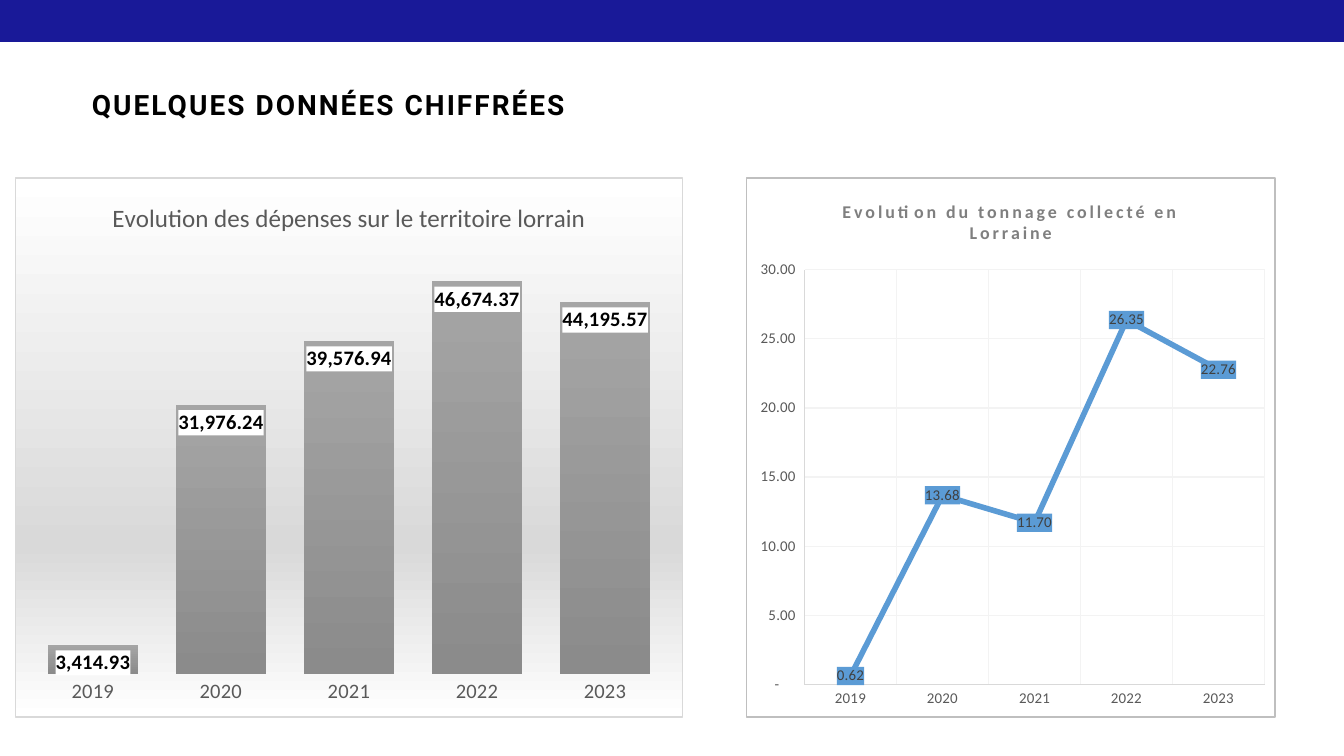
"""Build the slide of key figures: yearly spending and collected tonnage in Lorraine."""
from lxml.etree import SubElement
from pptx import Presentation
from pptx.chart.data import CategoryChartData
from pptx.dml.color import RGBColor
from pptx.enum.chart import XL_CHART_TYPE, XL_LABEL_POSITION, XL_MARKER_STYLE, XL_TICK_MARK
from pptx.enum.shapes import MSO_SHAPE
from pptx.enum.text import MSO_ANCHOR, PP_ALIGN
from pptx.oxml import parse_xml
from pptx.oxml.ns import nsdecls, qn
from pptx.util import Pt


def color(value):
    """Turn a hex string into a colour."""
    return RGBColor.from_string(value)


def write(frame, text, size=11, font="Calibri", ink="000000", bold=False, spacing=0, align=PP_ALIGN.CENTER):
    """Put one formatted paragraph into a text frame."""
    paragraph = frame.paragraphs[0]
    paragraph.alignment = align
    run = paragraph.add_run()
    run.text = text
    run.font.size, run.font.name, run.font.bold = Pt(size), font, bold
    run.font.color.rgb = color(ink)
    run.font._element.set("spc", str(round(spacing * 100)))


deck = Presentation()
deck.slide_width, deck.slide_height = Pt(720), Pt(405)
slide = deck.slides.add_slide(deck.slide_layouts[5])

band = slide.shapes.add_shape(MSO_SHAPE.RECTANGLE, Pt(0), Pt(0), Pt(720), Pt(22.5))
band.shadow.inherit = False
band.fill.solid()
band.fill.fore_color.rgb = color("191998")
band.line.fill.background()

heading = slide.shapes.title
heading.left, heading.top, heading.width, heading.height = Pt(42), Pt(43.5), Pt(637), Pt(60)
heading.text_frame.vertical_anchor = MSO_ANCHOR.TOP
heading.text_frame.word_wrap = True
write(heading.text_frame, "QUELQUES DONNÉES CHIFFRÉES", size=15, font="Roboto",
      bold=True, spacing=1.1, align=PP_ALIGN.LEFT)

years = ["2019", "2020", "2021", "2022", "2023"]
accounting = '_(* #,##0.00_);_(* \\(#,##0.00\\);_(* "-"??_);_(@_)'
spending = dict(
    kind=XL_CHART_TYPE.COLUMN_CLUSTERED, left=8, width=358, size=11, top_value=50000, step=10000,
    values=[3414.93, 31976.24, 39576.94, 46674.37, 44195.57],
    title="Evolution des dépenses sur le territoire lorrain",
    title_format=dict(size=13.4, ink="595959"),
    backdrop=[(0, "FFFFFF"), (68, "D9D9D9"), (100, "FFFFFF")], border="D9D9D9",
    plot_area=dict(x=0.02, y=0.14, w=0.96, h=0.78),
    label_fill="FFFFFF", label_ink="000000", label_bold=True, label_place=XL_LABEL_POSITION.INSIDE_END)
tonnage = dict(
    kind=XL_CHART_TYPE.LINE, left=399.5, width=284, size=8, top_value=30, step=5,
    values=[0.62, 13.68, 11.7, 26.35, 22.76],
    title="Evolution du tonnage collecté en Lorraine",
    title_format=dict(size=9.6, ink="7F7F7F", bold=True, spacing=1.5),
    backdrop=[(0, "FFFFFF"), (100, "FFFFFF")], border="BFBFBF",
    plot_area=dict(x=0.11, y=0.17, w=0.87, h=0.77),
    label_fill="5B9BD5", label_ink="404040", label_bold=False, label_place=XL_LABEL_POSITION.CENTER)

for topic in (spending, tonnage):
    figures = CategoryChartData(number_format="#,##0.00")
    figures.categories = years
    figures.add_series("Series 1", topic["values"])
    chart = slide.shapes.add_chart(topic["kind"], Pt(topic["left"]), Pt(95), Pt(topic["width"]),
                                   Pt(289.5), figures).chart
    chart.has_legend = False
    chart.font.size, chart.font.name = Pt(topic["size"]), "Calibri"
    write(chart.chart_title.text_frame, topic["title"], **topic["title_format"])
    chart.chart_title.include_in_layout = False

    stops = "".join(f'<a:gs pos="{place * 1000}"><a:srgbClr val="{tone}"/></a:gs>'
                    for place, tone in topic["backdrop"])
    chart._chartSpace.find(qn("c:chart")).addnext(parse_xml(
        f'<c:spPr {nsdecls("c", "a")}><a:gradFill><a:gsLst>{stops}</a:gsLst><a:lin ang="5400000"/></a:gradFill>'
        f'<a:ln w="9525"><a:solidFill><a:srgbClr val="{topic["border"]}"/></a:solidFill></a:ln></c:spPr>'))

    plot_area = chart._chartSpace.find(".//" + qn("c:plotArea"))
    for stale in plot_area.findall(qn("c:layout")):
        plot_area.remove(stale)
    layout = parse_xml(f'<c:layout {nsdecls("c")}><c:manualLayout/></c:layout>')
    settings = dict(layoutTarget="inner", xMode="edge", yMode="edge", **topic["plot_area"])
    for key, value in settings.items():
        SubElement(layout[0], qn(f"c:{key}")).set("val", str(value))
    plot_area.insert(0, layout)

    for axis in (chart.category_axis, chart.value_axis):
        axis.major_tick_mark = axis.minor_tick_mark = XL_TICK_MARK.NONE
        axis.tick_labels.font.size, axis.tick_labels.font.name = Pt(topic["size"]), "Calibri"
        axis.tick_labels.font.color.rgb = color("595959")
        axis.has_major_gridlines = topic is tonnage
        if topic is tonnage:
            axis.format.line.color.rgb = color("D9D9D9")
            axis.format.line.width = Pt(0.25)
            axis.major_gridlines.format.line.color.rgb = color("F3F3F3")
            axis.major_gridlines.format.line.width = Pt(0.75)
        else:
            axis.format.line.fill.background()
    chart.value_axis.minimum_scale, chart.value_axis.maximum_scale = 0, topic["top_value"]
    chart.value_axis.major_unit = topic["step"]
    chart.value_axis.tick_labels.number_format = accounting
    chart.value_axis.tick_labels.number_format_is_linked = False
    chart.value_axis.visible = topic is tonnage

    plot = chart.plots[0]
    plot.vary_by_categories = False
    series = plot.series[0]
    if topic is spending:
        plot.gap_width = 41
        series.format.fill.gradient()
        series.format.fill.gradient_angle = 270
        for stop, tone in zip(series.format.fill.gradient_stops, ("A5A5A5", "8B8B8B")):
            stop.color.rgb = color(tone)
    else:
        series.smooth = False
        series.marker.style = XL_MARKER_STYLE.NONE
        series.format.line.color.rgb = color("5B9BD5")
        series.format.line.width = Pt(3)

    labels = series.data_labels
    labels.show_value = True
    labels.number_format, labels.number_format_is_linked = "#,##0.00", False
    labels.position = topic["label_place"]
    labels.font.size, labels.font.name = Pt(topic["size"]), "Calibri"
    labels.font.bold = topic["label_bold"]
    labels.font.color.rgb = color(topic["label_ink"])
    labels._element.find(qn("c:txPr")).addprevious(parse_xml(
        f'<c:spPr {nsdecls("c", "a")}><a:solidFill><a:srgbClr val="{topic["label_fill"]}"/></a:solidFill></c:spPr>'))

deck.save("out.pptx")
